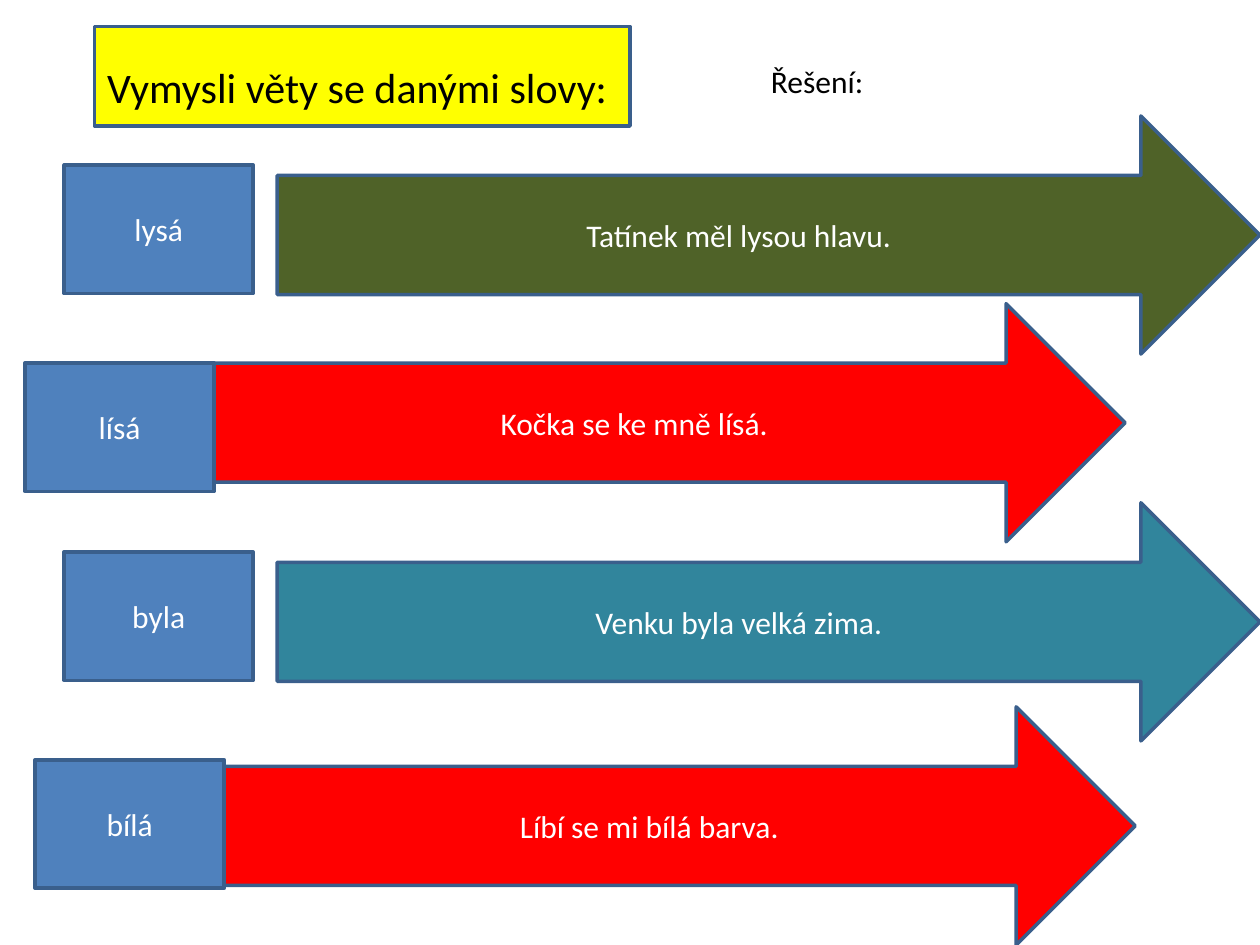
from pptx import Presentation
from pptx.dml.color import RGBColor
from pptx.enum.shapes import MSO_SHAPE
from pptx.enum.text import MSO_ANCHOR, MSO_AUTO_SIZE, PP_ALIGN
from pptx.util import Inches, Pt

HUES = {
    "yellow": "FFFF00", "green": "4F6228", "red": "FF0000", "teal": "31859C",
    "blue": "4F81BD", "edge": "3A5F8C", "white": "FFFFFF", "black": "000000",
}
FONT = "Calibri"
TITLE = "Vymysli věty se danými slovy:"
NOTE = "Řešení:"
WORD_W, WORD_H, ARROW_H = 1.5, 1.02, 1.89

# word, its left and top; sentence, arrow left, top, width and colour
ROWS = [
    ("lysá", 0.51, 1.31, "Tatínek měl lysou hlavu.", 2.2, 0.92, 7.8, "green"),
    ("lísá", 0.2, 2.88, "Kočka se ke mně lísá.", 1.61, 2.41, 7.32, "red"),
    ("byla", 0.51, 4.38, "Venku byla velká zima.", 2.2, 3.99, 7.8, "teal"),
    ("bílá", 0.28, 6.03, "Líbí se mi bílá barva.", 1.77, 5.61, 7.24, "red"),
]


def color(name):
    return RGBColor.from_string(HUES[name])


def write(shape, text, size, hue, align, anchor):
    frame = shape.text_frame
    frame.text = text
    frame.word_wrap = True
    frame.vertical_anchor = anchor
    para = frame.paragraphs[0]
    para.alignment = align
    font = para.runs[0].font
    font.name, font.size = FONT, Pt(size)
    font.color.rgb = color(hue)


def label(shape, text, size):
    write(shape, text, size, "black", PP_ALIGN.LEFT, MSO_ANCHOR.TOP)
    shape.text_frame.auto_size = MSO_AUTO_SIZE.SHAPE_TO_FIT_TEXT


def block(slide, kind, box, fill, text=None):
    shape = slide.shapes.add_shape(kind, *map(Inches, box))
    shape.shadow.inherit = False
    shape.fill.solid()
    shape.fill.fore_color.rgb = color(fill)
    shape.line.color.rgb = color("edge")
    shape.line.width = Pt(2)
    if text:
        write(shape, text, 18, "white", PP_ALIGN.CENTER, MSO_ANCHOR.MIDDLE)


def main():
    deck = Presentation()
    deck.slide_width, deck.slide_height = Inches(10), Inches(7.5)
    slide = deck.slides.add_slide(deck.slide_layouts[5])
    title = slide.shapes.title

    block(slide, MSO_SHAPE.RECTANGLE, (0.75, 0.21, 4.25, 0.79), "yellow")
    # Bring the title in front of its yellow panel
    slide.shapes._spTree.append(title._element)
    title.left, title.top, title.width, title.height = map(
        Inches, (0.75, 0.44, 9.45, 0.5))
    label(title, TITLE, 24)

    for _, _, _, text, left, top, width, hue in ROWS:
        block(slide, MSO_SHAPE.RIGHT_ARROW, (left, top, width, ARROW_H), hue, text)
    for word, left, top, *_ in ROWS:
        block(slide, MSO_SHAPE.RECTANGLE, (left, top, WORD_W, WORD_H), "blue", word)

    note = slide.shapes.add_textbox(*map(Inches, (6.02, 0.44, 1.65, 0.4)))
    label(note, NOTE, 18)
    deck.save("out.pptx")


if __name__ == "__main__":
    main()
